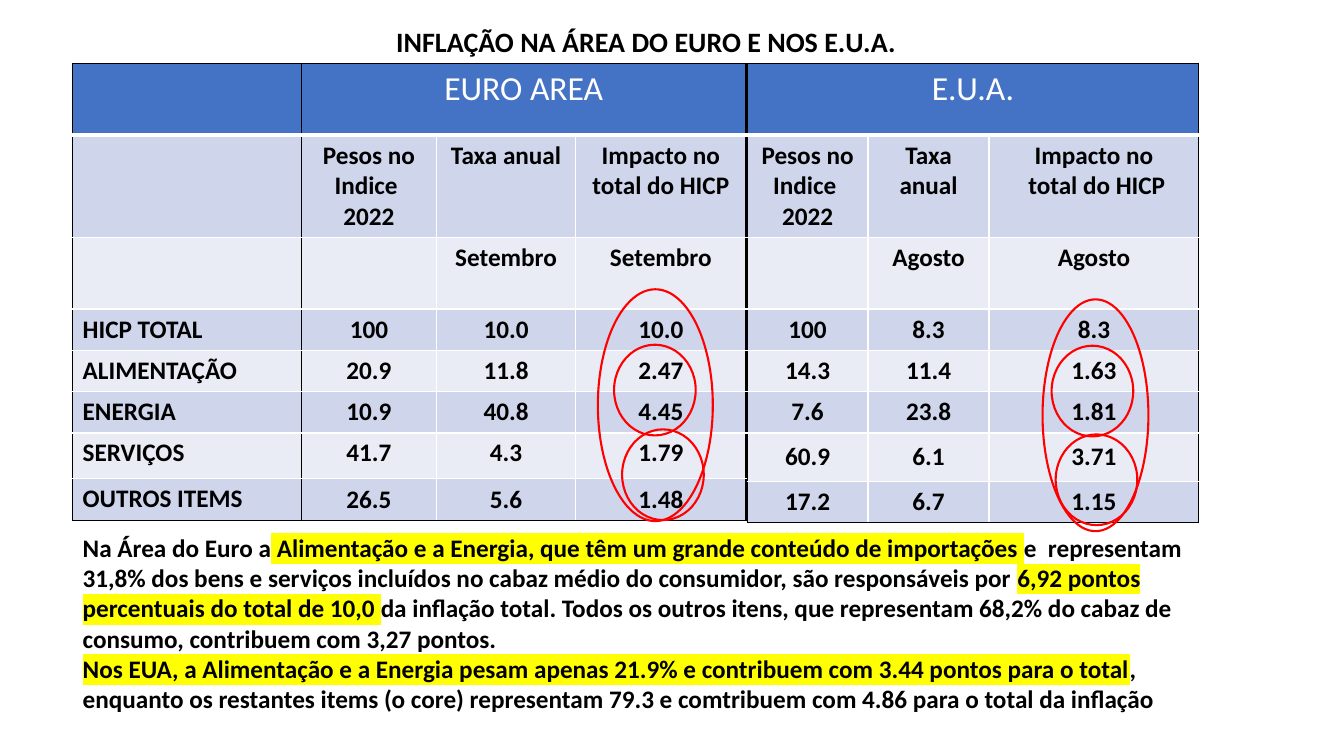
"""Build the slide comparing inflation in the euro area and the USA."""
from dataclasses import dataclass

from lxml import etree
from pptx import Presentation
from pptx.dml.color import RGBColor
from pptx.enum.shapes import MSO_SHAPE
from pptx.enum.text import MSO_ANCHOR, MSO_AUTO_SIZE, PP_ALIGN
from pptx.oxml.ns import qn
from pptx.util import Inches, Pt

OVAL = MSO_SHAPE.OVAL
TOP, MIDDLE = MSO_ANCHOR.TOP, MSO_ANCHOR.MIDDLE
NO_AUTOFIT = MSO_AUTO_SIZE.NONE
LEFT, CENTER = PP_ALIGN.LEFT, PP_ALIGN.CENTER

COLOURS = {
    "black": "000000", "white": "FFFFFF", "red": "FF0000", "yellow": "FFFF00",
    "header": "4472C4", "dark band": "CFD5EA", "light band": "E9EBF5",
}
FONT = "Calibri"
TABLE_TOP = 0.63
HEADING_HEIGHTS = [0.71, 1.01, 0.71]


@dataclass
class Region:
    """A table of one region, with its header over the figure columns."""
    name: str
    left: float
    label_columns: int
    widths: list[float]
    item_heights: list[float]
    middle_row: int
    rows: list[list[str]]


@dataclass
class Ring:
    """A red ellipse around some figures."""
    left: float
    top: float
    width: float = 0.81
    height: float = 0.9


REGIONS = [
    Region("EURO AREA", 0.72, 1, [2.27, 1.34, 1.38, 1.69], [0.41, 0.41, 0.41, 0.45, 0.42], 7, [
        ["", "Pesos no Indice \n2022", "Taxa anual", "Impacto no total do HICP"],
        ["", "", "Setembro", "Setembro"],
        ["HICP TOTAL", "100", "10.0", "10.0"],
        ["ALIMENTAÇÃO", "20.9", "11.8", "2.47"],
        ["ENERGIA", "10.9", "40.8", "4.45"],
        ["SERVIÇOS", "41.7", "4.3", "1.79"],
        ["OUTROS ITEMS", "26.5", "5.6", "1.48"],
    ]),
    Region("E.U.A.", 7.41, 0, [1.2, 1.2, 2.08], [0.41, 0.41, 0.41, 0.48, 0.4], 6, [
        ["Pesos no Indice \n2022", "Taxa anual", "Impacto no\n total do HICP"],
        ["", "Agosto", "Agosto"],
        ["100", "8.3", "8.3"],
        ["14.3", "11.4", "1.63"],
        ["7.6", "23.8", "1.81"],
        ["60.9", "6.1", "3.71"],
        ["17.2", "6.7", "1.15"],
    ]),
]
RINGS = [
    Ring(5.93, 2.87, 1.14, 2.3), Ring(10.34, 2.97, 1.05, 2.3),
    Ring(6.09, 3.42), Ring(10.43, 3.43), Ring(6.17, 4.26), Ring(10.47, 4.31),
]
COMMENTARY = [
    [("Na Área do Euro a", None),
     (" Alimentação e a Energia, que têm um grande conteúdo de importações ", "yellow"),
     ("e  representam 31,8% dos bens e serviços incluídos no cabaz médio do consumidor, "
      "são responsáveis por ", None),
     ("6,92 pontos percentuais do total de 10,0 ", "yellow"),
     ("da inflação total. Todos os outros itens, que representam 68,2% do cabaz de consumo, "
      "contribuem com 3,27 pontos.", None)],
    [("Nos EUA, a Alimentação e a Energia pesam apenas 21.9% e contribuem com 3.44 pontos "
      "para o total", "yellow"),
     (", enquanto os restantes items (o core) representam 79.3 e comtribuem com 4.86 "
      "para o total da inflação", None)],
]


def rgb(name: str) -> RGBColor:
    """Return the named colour."""
    return RGBColor.from_string(COLOURS[name])


def write(para, text: str, size: float = 18, bold: bool = True, colour: str = "black",
          highlight: str | None = None, align=LEFT) -> None:
    """Add a formatted span of text to a paragraph."""
    para.alignment = align
    span = para.add_run()
    span.text = text
    span.font.size, span.font.bold, span.font.name = Pt(size), bold, FONT
    span.font.color.rgb = rgb(colour)
    if highlight:
        mark = etree.Element(qn("a:highlight"))
        etree.SubElement(mark, qn("a:srgbClr"), val=COLOURS[highlight])
        span.font._element.find(qn("a:solidFill")).addnext(mark)


def place(box, left: float, top: float, width: float, height: float, wrap: bool) -> None:
    """Move a placeholder and set up its text frame."""
    box.left, box.top, box.width, box.height = map(Inches, (left, top, width, height))
    frame = box.text_frame
    frame.word_wrap, frame.auto_size, frame.vertical_anchor = wrap, NO_AUTOFIT, TOP


def set_borders(cell, borders: dict[str, tuple[str, float]]) -> None:
    """Draw the cell's borders, given in the order left, right, top, bottom."""
    properties = cell._tc.get_or_add_tcPr()
    for index, (side, (colour, points)) in enumerate(borders.items()):
        line = etree.Element(qn(f"a:ln{side}"), w=str(Pt(points)))
        fill = etree.SubElement(line, qn("a:solidFill"))
        etree.SubElement(fill, qn("a:srgbClr"), val=COLOURS[colour])
        properties.insert(index, line)


def cell_borders(region: Region, row: int, column: int) -> dict[str, tuple[str, float]]:
    """Return black borders round the blocks of a table and white ones inside."""
    header = row == 0
    last_column = len(region.widths) - 1
    black, white = ("black", 1), ("white", 1)
    return {
        "L": black if header or column in (0, region.label_columns) else white,
        "R": black if header or column in (region.label_columns - 1, last_column) else white,
        "T": black if header else white,
        "B": ("white", 3) if header else black if row == len(region.rows) else white,
    }


def add_region(page, region: Region) -> None:
    """Add the table of one region."""
    heights = HEADING_HEIGHTS + region.item_heights
    table = page.shapes.add_table(
        len(heights), len(region.widths), Inches(region.left), Inches(TABLE_TOP),
        Inches(sum(region.widths)), Inches(sum(heights))).table
    for column, width in zip(table.columns, region.widths):
        column.width = Inches(width)
    for row, height in zip(table.rows, heights):
        row.height = Inches(height)
    header = [""] * len(region.widths)
    header[region.label_columns] = region.name
    for row, texts in enumerate([header] + region.rows):
        band = "header" if row == 0 else "dark band" if row % 2 else "light band"
        style = {"size": 24, "bold": False, "colour": "white"} if row == 0 else {}
        for column, text in enumerate(texts):
            cell = table.cell(row, column)
            cell.fill.solid()
            cell.fill.fore_color.rgb = rgb(band)
            set_borders(cell, cell_borders(region, row, column))
            is_label = column < region.label_columns
            if row == region.middle_row and not is_label:
                cell.vertical_anchor = MIDDLE
            for index, line in enumerate(text.split("\n") if text else []):
                para = cell.text_frame.add_paragraph() if index else cell.text_frame.paragraphs[0]
                write(para, line, align=LEFT if is_label else CENTER, **style)
    table.cell(0, region.label_columns).merge(table.cell(0, len(region.widths) - 1))


def add_ring(page, ring: Ring) -> None:
    """Add one red ellipse."""
    oval = page.shapes.add_shape(
        OVAL, *map(Inches, (ring.left, ring.top, ring.width, ring.height)))
    oval.shadow.inherit = False
    oval.fill.background()
    oval.line.color.rgb = rgb("red")
    oval.line.width = Pt(1.5)


def add_commentary(body) -> None:
    """Fill the body with the unbulleted commentary."""
    place(body, 0.72, 5.23, 11.17, 1.92, True)
    for index, spans in enumerate(COMMENTARY):
        para = body.text_frame.add_paragraph() if index else body.text_frame.paragraphs[0]
        para.space_before = Pt(0)
        properties = para._p.get_or_add_pPr()
        properties.set("marL", "0")
        properties.set("indent", "0")
        etree.SubElement(properties, qn("a:buNone"))
        for text, highlight in spans:
            write(para, text, highlight=highlight)


def main() -> None:
    """Build and save the deck."""
    deck = Presentation()
    deck.slide_width, deck.slide_height = Inches(13.33), Inches(7.5)
    page = deck.slides.add_slide(deck.slide_layouts[1])
    title = page.shapes.title
    place(title, 3.83, 0.19, 5.19, 0.44, False)
    write(title.text_frame.paragraphs[0], "INFLAÇÃO NA ÁREA DO EURO E NOS E.U.A.", size=20)
    add_commentary(page.placeholders[1])
    for region in REGIONS:
        add_region(page, region)
    for ring in RINGS:
        add_ring(page, ring)
    deck.save("out.pptx")


if __name__ == "__main__":
    main()
